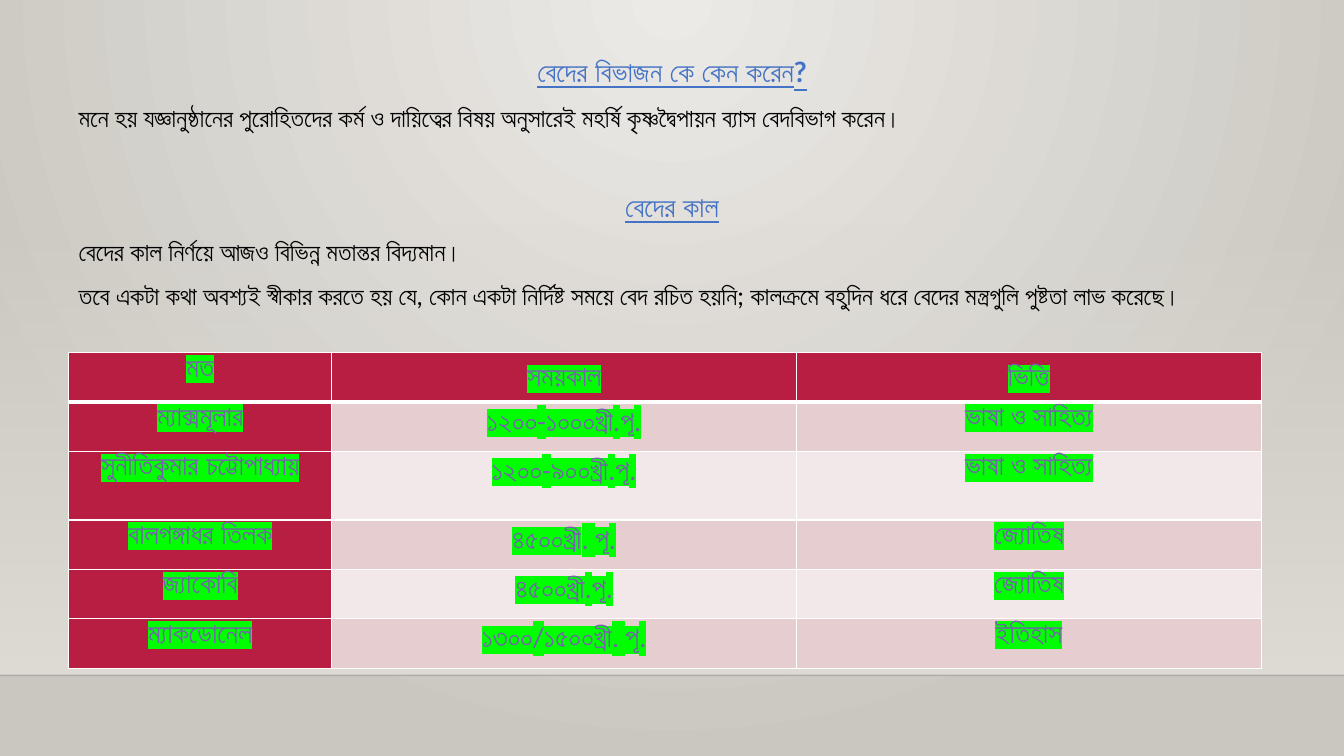
"""Build a slide on the division and the dating of the Vedas."""
import pptx
import pptx.dml.color
import pptx.enum.shapes
import pptx.enum.text
import pptx.oxml
import pptx.oxml.ns
import pptx.util
from lxml import etree

Inches = pptx.util.Inches
Pt = pptx.util.Pt
RGBColor = pptx.dml.color.RGBColor
qn = pptx.oxml.ns.qn
Align = pptx.enum.text.PP_ALIGN
Anchor = pptx.enum.text.MSO_ANCHOR

BLACK = RGBColor(0x00, 0x00, 0x00)
RULE = RGBColor(0x00, 0x00, 0x01)
WHITE = RGBColor(0xFF, 0xFF, 0xFF)
BLUE = RGBColor(0x44, 0x72, 0xC4)
PURPLE = RGBColor(0x79, 0x5F, 0xAF)
GREEN = RGBColor(0x00, 0xFF, 0x00)
CRIMSON = RGBColor(0xB7, 0x1E, 0x42)
ROSE = RGBColor(0xE6, 0xCD, 0xCF)
PALE_ROSE = RGBColor(0xF3, 0xE8, 0xE9)
LIGHT_STONE = RGBColor(0xEC, 0xEA, 0xE7)
STONE = RGBColor(0xCA, 0xC7, 0xC1)
WALL = RGBColor(0xDF, 0xDB, 0xD5)

TITLE = "বেদের বিভাজন কে কেন করেন?"
DIVISION = "মনে হয় যজ্ঞানুষ্ঠানের পুরোহিতদের কর্ম ও দায়িত্বের বিষয় অনুসারেই মহর্ষি কৃষ্ণদ্বৈপায়ন ব্যাস বেদবিভাগ করেন।"
SUBTITLE = "বেদের কাল"
DATING = [
    "বেদের কাল নির্ণয়ে আজও বিভিন্ন মতান্তর বিদ্যমান।",
    "তবে একটা কথা অবশ্যই স্বীকার করতে হয় যে, কোন একটা নির্দিষ্ট সময়ে বেদ রচিত হয়নি; "
    "কালক্রমে বহুদিন ধরে বেদের মন্ত্রগুলি পুষ্টতা লাভ করেছে।",
]
OPINIONS = [
    ["মত", "সময়কাল", "ভিত্তি"],
    ["ম্যাক্সমূলার", "১২০০-১০০০খ্রী.পূ.", "ভাষা ও সাহিত্য"],
    ["সুনীতিকুমার চট্টোপাধ্যায়", "১২০০-৯০০খ্রী.পূ.", "ভাষা ও সাহিত্য"],
    ["বালগঙ্গাধর তিলক", "৪৫০০খ্রী. পূ.", "জ্যোতিষ"],
    ["জ্যাকোবি", "৪৫০০খ্রী.পূ.", "জ্যোতিষ"],
    ["ম্যাকডোনেল", "১৩০০/১৫০০খ্রী. পূ.", "ইতিহাস"],
]


def write_text(frame, text, *, font="Lato", size=18, color=BLACK, bold=False,
               underline=False, align=Align.LEFT, before=0, highlight=None):
    para = frame.add_paragraph() if frame.text else frame.paragraphs[0]
    properties = para._p.get_or_add_pPr()
    properties.set("marL", "0")
    properties.set("indent", "0")
    etree.SubElement(properties, qn("a:buNone"))
    para.alignment = align
    para.line_spacing = 1.07
    para.space_before = Pt(before)
    para.space_after = Pt(8)
    span = para.add_run()
    span.text = text
    span.font.name = font
    span.font.size = Pt(size)
    span.font.bold = bold
    span.font.underline = underline
    span.font.color.rgb = color
    if highlight is not None:
        mark = etree.Element(qn("a:highlight"))
        etree.SubElement(mark, qn("a:srgbClr"), val=str(highlight))
        span._r.rPr.find(qn("a:solidFill")).addnext(mark)


def set_alpha(color_element, percent):
    etree.SubElement(color_element, qn("a:alpha"), val=str(percent * 1000))


class SlideBuilder:
    """Holds the slide and its style, and draws each kind of element."""

    def __init__(self, page, font="Calibri"):
        self.page = page
        self.font = font

    def gradient(self, fill, colors):
        fill.gradient()
        for stop, color in zip(fill.gradient_stops, colors):
            stop.color.rgb = color

    def background(self):
        self.gradient(self.page.background.fill, [LIGHT_STONE, STONE])
        linear = next(self.page.element.iter(qn("a:lin")))
        circle = etree.Element(qn("a:path"), {"path": "circle"})
        etree.SubElement(circle, qn("a:fillToRect"),
                         l="43000", t="0", r="43000", b="100000")
        linear.getparent().replace(linear, circle)

    def wall(self, left, top, width, height):
        wall = self.page.shapes.add_shape(
            pptx.enum.shapes.MSO_SHAPE.RECTANGLE,
            Inches(left), Inches(top), Inches(width), Inches(height))
        wall.shadow.inherit = False
        wall.line.fill.background()
        self.gradient(wall.fill, [WALL, WALL])
        wall.fill.gradient_angle = 270
        set_alpha(next(wall.element.iter(qn("a:srgbClr"))), 0)
        wall.element.getparent().insert(2, wall.element)

    def rule(self, left, right, top):
        rule = self.page.shapes.add_connector(
            pptx.enum.shapes.MSO_CONNECTOR.STRAIGHT,
            Inches(left), Inches(top), Inches(right), Inches(top))
        rule.line.color.rgb = RULE
        rule.line.width = Pt(1)
        set_alpha(next(rule.element.iter(qn("a:srgbClr"))), 20)
        etree.SubElement(rule.element.spPr, qn("a:effectLst"))

    def place(self, box, left, top, width, height):
        box.left, box.top = Inches(left), Inches(top)
        box.width, box.height = Inches(width), Inches(height)
        frame = box.text_frame
        frame.word_wrap = True
        frame.auto_size = pptx.enum.text.MSO_AUTO_SIZE.NONE
        frame.vertical_anchor = Anchor.TOP
        frame.margin_left = frame.margin_right = Inches(0.1)
        frame.margin_top = frame.margin_bottom = Inches(0.05)
        return frame

    def borders(self, cell, widths):
        for index, (side, width) in enumerate(widths.items()):
            border = etree.Element(qn(f"a:ln{side}"), w=str(Pt(width)))
            fill = etree.SubElement(border, qn("a:solidFill"))
            etree.SubElement(fill, qn("a:srgbClr"), val=str(WHITE))
            cell._tc.get_or_add_tcPr().insert(index, border)

    def table(self, rows, left, top, widths, heights):
        table = self.page.shapes.add_table(
            len(rows), len(widths), Inches(left), Inches(top),
            Inches(sum(widths)), Inches(sum(heights))).table
        for column, width in zip(table.columns, widths):
            column.width = Inches(width)
        for number, (row, height) in enumerate(zip(rows, heights)):
            table.rows[number].height = Inches(height)
            for place, text in enumerate(row):
                heading = number == 0 or place == 0
                cell = table.cell(number, place)
                cell.margin_left = cell.margin_right = Inches(0.07)
                cell.margin_top = cell.margin_bottom = 0
                middle = number == 0 and place > 0
                cell.vertical_anchor = Anchor.MIDDLE if middle else Anchor.TOP
                cell.fill.solid()
                band = ROSE if number % 2 else PALE_ROSE
                cell.fill.fore_color.rgb = CRIMSON if heading else band
                self.borders(cell, {"L": 1, "R": 1, "T": 3 if number == 1 else 1,
                                    "B": 3 if number == 0 else 1})
                write_text(cell.text_frame, text, font=self.font, size=20,
                           color=PURPLE, bold=heading, align=Align.CENTER,
                           highlight=GREEN)


def main():
    deck = pptx.Presentation()
    deck.slide_width, deck.slide_height = Inches(13.33), Inches(7.5)
    page = deck.slides.add_slide(deck.slide_layouts[1])
    builder = SlideBuilder(page)
    builder.background()
    builder.wall(0, 2.21, 13.33, 4.49)
    builder.rule(0, 13.33, 6.7)
    builder.table(OPINIONS, 0.68, 3.5, [2.61, 4.61, 4.61],
                  [0.49, 0.49, 0.68, 0.49, 0.49, 0.49])

    heading = {"size": 20, "color": BLUE, "bold": True, "underline": True,
               "align": Align.CENTER}
    title = builder.place(page.shapes.title, 0.68, 0.47, 11.97, 0.47)
    write_text(title, TITLE, **heading)
    body = builder.place(page.placeholders[1], 0.68, 0.94, 11.97, 2.5)
    write_text(body, DIVISION)
    write_text(body, SUBTITLE, before=31.5, **heading)
    for text in DATING:
        write_text(body, text)
    deck.save("out.pptx")


if __name__ == "__main__":
    main()
